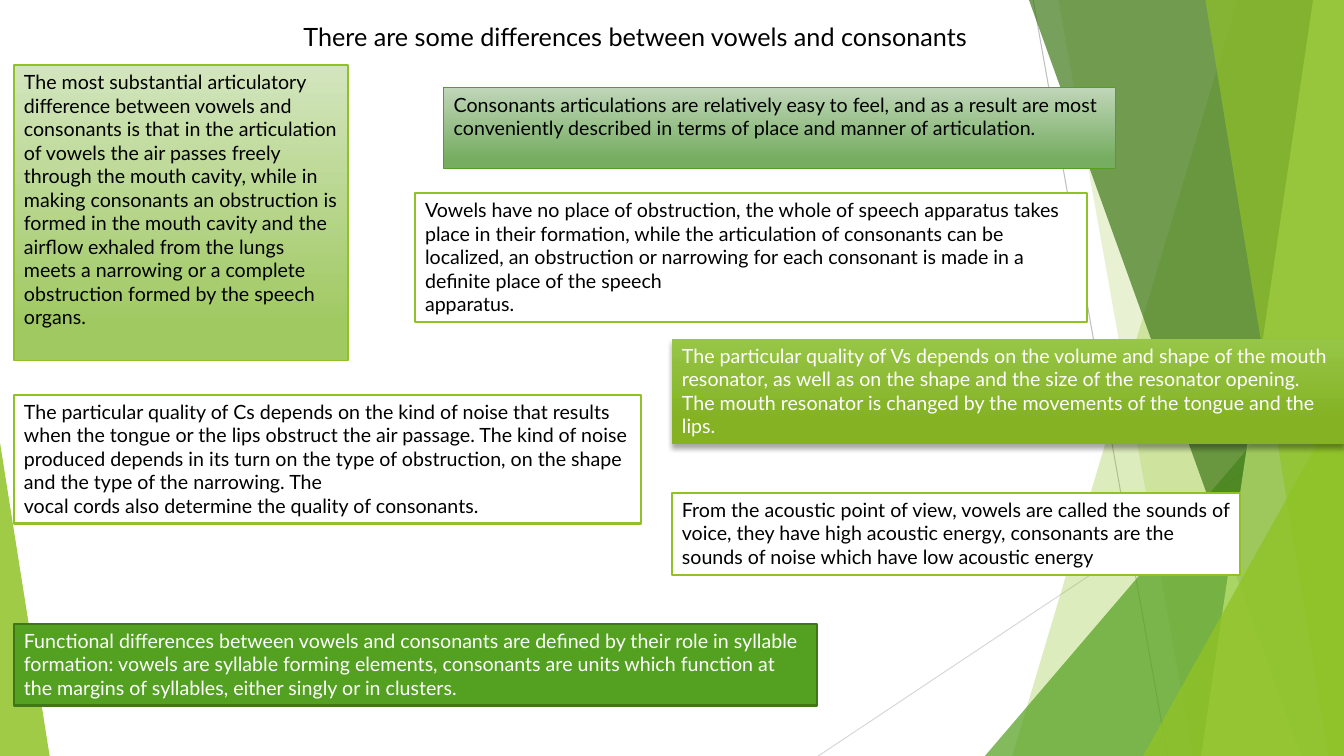
"""Build the slide on differences between vowels and consonants."""
from dataclasses import dataclass

from lxml.etree import SubElement
from pptx import Presentation
from pptx.dml.color import RGBColor
from pptx.enum.shapes import MSO_CONNECTOR as Connector, MSO_SHAPE as Preset
from pptx.enum.text import MSO_ANCHOR as Anchor, MSO_AUTO_SIZE as AutoSize, PP_ALIGN as Align
from pptx.oxml.ns import qn
from pptx.util import Pt

WIDTH, HEIGHT = 960, 540


@dataclass(frozen=True)
class Theme:
    """Hold the colours and type sizes of the slide."""
    font: str = "Lato"
    title_size: int = 18
    body_size: int = 14
    black: str = "000000"
    white: str = "FFFFFF"
    lime: str = "90C226"
    pale_lime: str = "C0E474"
    green: str = "54A021"
    dark_green: str = "3F7819"
    green_edge: str = "3E7618"
    grey: str = "BFBFBF"
    light_grey: str = "D9D9D9"
    lime_tint: tuple = (("D3E5BE", 0), ("A0C962", 0.88))
    green_tint: tuple = (("C0D6B9", 0), ("76AD61", 0.88))
    lime_glow: tuple = (("97C547", 0), ("84B223", 0.78))


THEME = Theme()


def color(code):
    """Turn a hex code into a colour."""
    return RGBColor.from_string(code)


def apply_format(target, values):
    """Set each attribute of a target from a dict."""
    for name, value in values.items():
        setattr(target, name, value)


def write_text(shape, paragraphs, size, code):
    """Write left-aligned, top-anchored paragraphs into a shape."""
    frame = shape.text_frame
    apply_format(frame, {
        "text": "\n".join(paragraphs), "word_wrap": True,
        "auto_size": AutoSize.NONE, "vertical_anchor": Anchor.TOP,
        "margin_left": Pt(7.2), "margin_right": Pt(7.2),
        "margin_top": Pt(3.6), "margin_bottom": Pt(3.6)})
    for paragraph in frame.paragraphs:
        paragraph.alignment = Align.LEFT
        apply_format(paragraph.font, {"name": THEME.font, "size": Pt(size), "bold": False})
        paragraph.font.color.rgb = color(code)


def add_title(slide, text):
    """Place and fill the title placeholder."""
    title = slide.shapes.title
    apply_format(title, {"left": Pt(209.5), "top": Pt(11.5), "width": Pt(587.5), "height": Pt(29)})
    write_text(title, [text], THEME.title_size, THEME.black)


def add_hairline(slide, start, end, code):
    """Draw a thin background line."""
    line = slide.shapes.add_connector(Connector.STRAIGHT, *map(Pt, start + end))
    line.line.color.rgb = color(code)
    line.line.width = Pt(0.75)
    SubElement(line._element.spPr, qn("a:effectLst"))


def paint_facet(shape, code, opacity):
    """Give a facet a translucent fill and no outline."""
    shape.shadow.inherit = False
    shape.fill.solid()
    shape.fill.fore_color.rgb = color(code)
    shape.line.fill.background()
    tint = shape._element.spPr.find(qn("a:solidFill")).find(qn("a:srgbClr"))
    SubElement(tint, qn("a:alpha"), val=str(opacity * 1000))


def add_band(slide, top_x, bottom_x, code, opacity):
    """Draw a full-height facet that reaches the right edge."""
    builder = slide.shapes.build_freeform(Pt(top_x), Pt(0))
    corners = [(WIDTH, 0), (WIDTH, HEIGHT), (bottom_x, HEIGHT)]
    builder.add_line_segments([(Pt(x), Pt(y)) for x, y in corners], close=True)
    paint_facet(builder.convert_to_shape(), code, opacity)


def add_corner(slide, left, top, width, apex, code, opacity):
    """Draw a right triangle standing on the bottom edge."""
    triangle = slide.shapes.add_shape(
        Preset.ISOSCELES_TRIANGLE, Pt(left), Pt(top), Pt(width), Pt(HEIGHT - top))
    triangle.adjustments[0] = apex
    paint_facet(triangle, code, opacity)


def fill_box(box, fill):
    """Fill a box with one colour or a downward gradient."""
    if isinstance(fill, str):
        box.fill.solid()
        box.fill.fore_color.rgb = color(fill)
        return
    box.fill.gradient()
    box.fill.gradient_angle = 270
    for stop, (code, position) in zip(box.fill.gradient_stops, fill):
        stop.color.rgb = color(code)
        stop.position = position


def drop_shadow(box):
    """Cast a soft shadow below a box."""
    effects = box._element.spPr.find(qn("a:effectLst"))
    shadow = SubElement(effects, qn("a:outerShdw"), blurRad=str(Pt(4)), dist=str(Pt(3)),
                        dir="5400000", rotWithShape="0")
    tint = SubElement(shadow, qn("a:srgbClr"), val=THEME.black)
    SubElement(tint, qn("a:alpha"), val="35000")


def add_box(slide, place, paragraphs, fill=THEME.white, edge=THEME.lime, edge_width=1.5,
            text_color=THEME.black):
    """Add a text box; one without an edge casts a shadow."""
    box = slide.shapes.add_shape(Preset.RECTANGLE, *map(Pt, place))
    box.shadow.inherit = False
    fill_box(box, fill)
    if edge:
        box.line.color.rgb = color(edge)
        box.line.width = Pt(edge_width)
    else:
        box.line.fill.background()
        drop_shadow(box)
    write_text(box, paragraphs, THEME.body_size, text_color)


def add_background(slide):
    """Draw the faceted decoration from back to front."""
    add_hairline(slide, (738, 0), (834, HEIGHT), THEME.grey)
    add_hairline(slide, (WIDTH, 290), (584.5, HEIGHT), THEME.light_grey)
    add_band(slide, 884, 723, THEME.lime, 30)
    add_band(slide, 756, 852, THEME.lime, 20)
    add_corner(slide, 703.5, 240, 256.5, 1, THEME.green, 72)
    add_band(slide, 735, 929.5, THEME.dark_green, 70)
    add_band(slide, 938, 858, THEME.pale_lime, 70)
    add_band(slide, 861, 949, THEME.lime, 65)
    add_corner(slide, 816.5, 283, 143.5, 1, THEME.lime, 80)
    add_corner(slide, 0, 316, 35.5, 0, THEME.lime, 85)


def add_statements(slide):
    """Add the seven statements."""
    add_box(slide, (10, 46.5, 238.5, 211), [
        "The most substantial articulatory difference between vowels and consonants is that in "
        "the articulation of vowels the air passes freely through the mouth cavity, while in "
        "making consonants an obstruction is formed in the mouth cavity and the airflow exhaled "
        "from the lungs meets a narrowing or a complete obstruction formed by the speech organs.",
    ], THEME.lime_tint, edge_width=1)
    add_box(slide, (10, 445.5, 573.5, 58.5), [
        "Functional differences between vowels and consonants are defined by their role in "
        "syllable formation: vowels are syllable forming elements, consonants are units which "
        "function at the margins of syllables, either singly or in clusters.",
    ], THEME.green, THEME.green_edge, text_color=THEME.white)
    add_box(slide, (317, 62.5, 480, 58), [
        "Consonants articulations are relatively easy to feel, and as a result are most "
        "conveniently described in terms of place and manner of articulation.",
    ], THEME.green_tint, THEME.green, 1)
    add_box(slide, (296.5, 138, 480, 92), [
        "Vowels have no place of obstruction, the whole of speech apparatus takes place in "
        "their formation, while the articulation of consonants can be localized, an obstruction "
        "or narrowing for each consonant is made in a definite place of the speech",
        "apparatus."])
    add_box(slide, (480, 242, 480, 75), [
        "The particular quality of Vs depends on the volume and shape of the mouth resonator, "
        "as well as on the shape and the size of the resonator opening. The mouth resonator is "
        "changed by the movements of the tongue and the lips.",
    ], THEME.lime_glow, None, text_color=THEME.white)
    add_box(slide, (10, 282, 448, 92), [
        "The particular quality of Cs depends on the kind of noise that results when the tongue "
        "or the lips obstruct the air passage. The kind of noise produced depends in its turn on "
        "the type of obstruction, on the shape and the type of the narrowing. The",
        "vocal cords also determine the quality of consonants."])
    add_box(slide, (480, 352, 406, 58.5), [
        "From the acoustic point of view, vowels are called the sounds of voice, they have high "
        "acoustic energy, consonants are the sounds of noise which have low acoustic energy"])


def main():
    """Build and save the presentation."""
    presentation = Presentation()
    apply_format(presentation, {"slide_width": Pt(WIDTH), "slide_height": Pt(HEIGHT)})
    slide = presentation.slides.add_slide(presentation.slide_layouts.get_by_name("Title Only"))
    add_background(slide)
    add_title(slide, "There are some differences between vowels and consonants")
    add_statements(slide)
    presentation.save("out.pptx")


if __name__ == "__main__":
    main()
